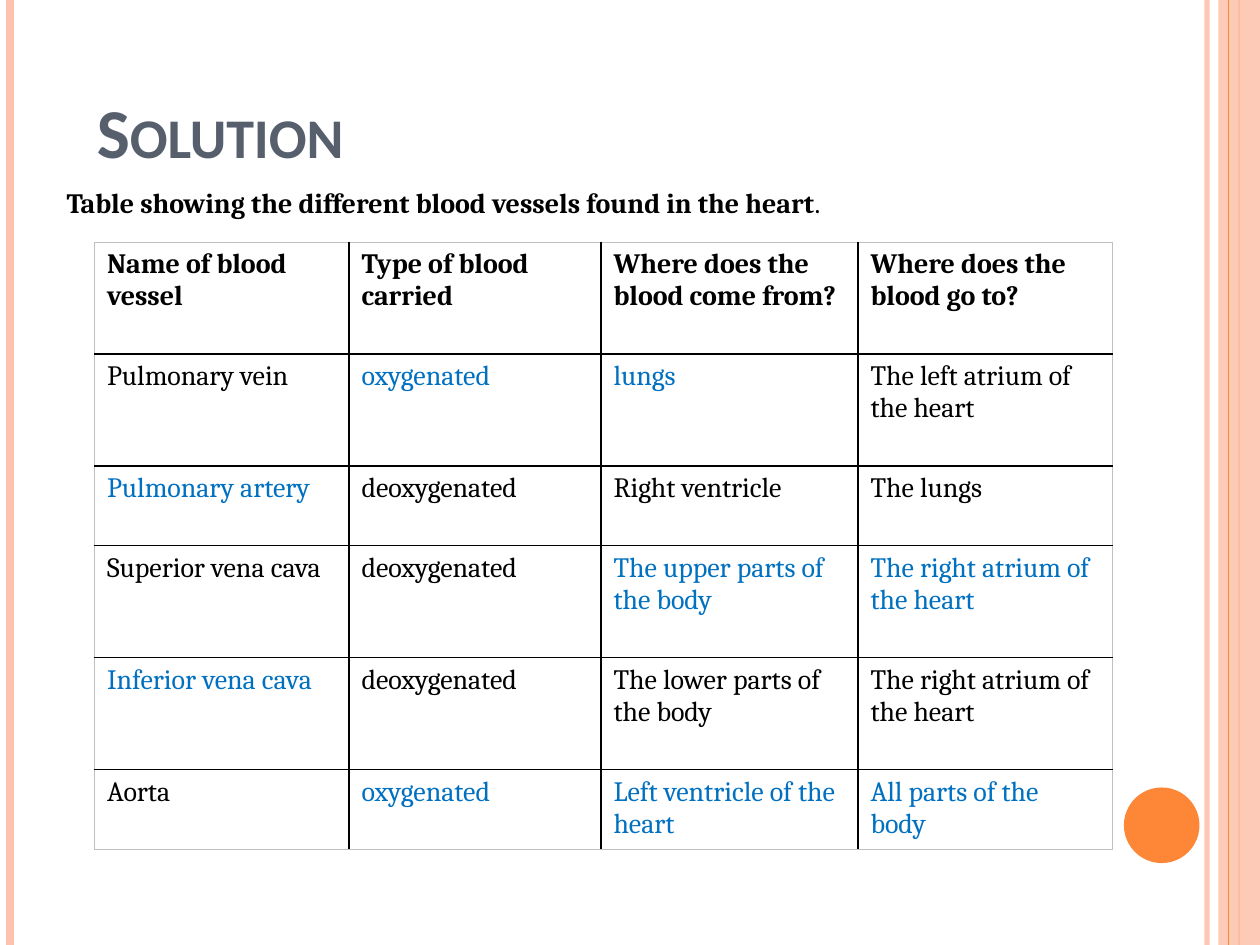
from dataclasses import dataclass

from lxml import etree
from pptx import Presentation
from pptx.dml.color import RGBColor
from pptx.enum.shapes import MSO_CONNECTOR, MSO_SHAPE
from pptx.enum.text import MSO_ANCHOR
from pptx.oxml.ns import qn
from pptx.util import Inches, Pt

LINE = MSO_CONNECTOR.STRAIGHT
RECT, OVAL = MSO_SHAPE.RECTANGLE, MSO_SHAPE.OVAL
TOP, BOTTOM = MSO_ANCHOR.TOP, MSO_ANCHOR.BOTTOM
WIDE, HIGH = 10, 7.5


@dataclass(frozen=True)
class Theme:
    head: str = "Calibri"
    body: str = "Cambria"
    big: int = 40
    small: int = 16
    slate: str = "575F6D"
    black: str = "000000"
    blue: str = "0070C0"
    white: str = "FFFFFF"
    pink: str = "FEC3AE"
    orange: str = "FE8637"
    edge: str = "C0C0C0"


THEME = Theme()

HEADS = ["Name of blood vessel", "Type of blood carried",
         "Where does the blood come from?", "Where does the blood go to?"]
VESSELS = [
    ["Pulmonary vein", "oxygenated", "lungs", "The left atrium of the heart"],
    ["Pulmonary artery", "deoxygenated", "Right ventricle", "The lungs"],
    ["Superior vena cava", "deoxygenated", "The upper parts of the body",
     "The right atrium of the heart"],
    ["Inferior vena cava", "deoxygenated", "The lower parts of the body",
     "The right atrium of the heart"],
    ["Aorta", "oxygenated", "Left ventricle of the heart",
     "All parts of the body"],
]
# Row and column of each answer that was filled in
ANSWERS = {(1, 1), (1, 2), (2, 0), (3, 2), (3, 3), (4, 0),
           (5, 1), (5, 2), (5, 3)}
COLS = [2.02, 2, 2.04, 2.02]
TALL, SHORT = 0.89, 0.63
ROWS = [TALL, TALL, SHORT, TALL, TALL, SHORT]


def color(code):
    return RGBColor.from_string(code)


def style(run, font, size, code, bold=False):
    run.font.name = font
    run.font.size = Pt(size)
    run.font.color.rgb = color(code)
    run.font.bold = bold


def fade(fill, share):
    tint = fill.find(".//" + qn("a:srgbClr"))
    etree.SubElement(tint, qn("a:alpha"), val=str(share * 1000))


def stripe(slide, x, code, width, share=100):
    rule = slide.shapes.add_connector(
        LINE, Inches(x), 0, Inches(x), Inches(HIGH))
    rule.line.color.rgb = color(code)
    rule.line.width = Pt(width)
    props = rule._element.spPr
    if share < 100:
        fade(props.find(qn("a:ln")), share)
    etree.SubElement(props, qn("a:effectLst"))


def solid(slide, kind, box, code):
    shape = slide.shapes.add_shape(kind, *map(Inches, box))
    shape.shadow.inherit = False
    shape.fill.solid()
    shape.fill.fore_color.rgb = color(code)
    shape.line.fill.background()
    return shape


def text_box(slide, box, anchor):
    frame = slide.shapes.add_textbox(*map(Inches, box)).text_frame
    frame.word_wrap = True
    frame.vertical_anchor = anchor
    return frame


def add_frame(slide, band):
    """Stripes down both sides, with the disc beside the right band."""
    left, top, width, height = band
    stripe(slide, left - 0.09, THEME.pink, 3, 93)
    stripe(slide, 0.08, THEME.pink, 4.5)
    stripe(slide, left + width / 2, THEME.orange, 1.5)
    panel = solid(slide, RECT, band, THEME.pink)
    fade(panel._element.spPr.find(qn("a:solidFill")), 87)
    stripe(slide, left + width / 4, THEME.orange, 0.75)
    solid(slide, OVAL, (left - 0.75, height * 5 / 6, 0.6, 0.6), THEME.orange)


def add_title(slide, box):
    para = text_box(slide, box, BOTTOM).paragraphs[0]
    para.text = "Solution"
    run = para.runs[0]
    style(run, THEME.head, THEME.big, THEME.slate, True)
    run.font._element.set("cap", "small")


def add_lead(slide, box):
    para = text_box(slide, box, TOP).paragraphs[0]
    para.space_before = Pt(6)
    para.text = "Table showing the different blood vessels found in the heart"
    style(para.runs[0], THEME.body, THEME.small, THEME.black, True)
    stop = para.add_run()
    stop.text = "."
    style(stop, THEME.body, THEME.small, THEME.black)


def border(cell, outer):
    """Black inner rules, with a thin grey line on the outer sides."""
    props = cell._tc.get_or_add_tcPr()
    for spot, (side, rim) in enumerate(zip("LRTB", outer)):
        width = Pt(0.5 if rim else 1)
        rule = etree.Element(qn(f"a:ln{side}"), w=str(int(width)))
        fill = etree.SubElement(rule, qn("a:solidFill"))
        code = THEME.edge if rim else THEME.black
        etree.SubElement(fill, qn("a:srgbClr"), val=code)
        props.insert(spot, rule)


def add_grid(slide, box):
    table = slide.shapes.add_table(
        len(ROWS), len(COLS), *map(Inches, box)).table
    for col, width in zip(table.columns, COLS):
        col.width = Inches(width)
    for row, height in zip(table.rows, ROWS):
        row.height = Inches(height)
    for r, words in enumerate([HEADS] + VESSELS):
        for c, word in enumerate(words):
            cell = table.cell(r, c)
            cell.text_frame.text = word
            code = THEME.blue if (r, c) in ANSWERS else THEME.black
            run = cell.text_frame.paragraphs[0].runs[0]
            style(run, THEME.body, THEME.small, code, r == 0)
            cell.fill.solid()
            cell.fill.fore_color.rgb = color(THEME.white)
            border(cell, (c == 0, c == len(COLS) - 1,
                          r == 0, r == len(ROWS) - 1))


def main():
    deck = Presentation()
    deck.slide_width, deck.slide_height = Inches(WIDE), Inches(HIGH)
    slide = deck.slides.add_slide(deck.slide_layouts[6])
    add_frame(slide, (WIDE - 0.33, 0, 0.33, HIGH))
    add_lead(slide, (0.43, 1.42, 9, 4.75))
    add_title(slide, (0.67, 0.42, 9, 1))
    add_grid(slide, (0.75, 1.92, sum(COLS), sum(ROWS)))
    deck.save("out.pptx")


if __name__ == "__main__":
    main()
